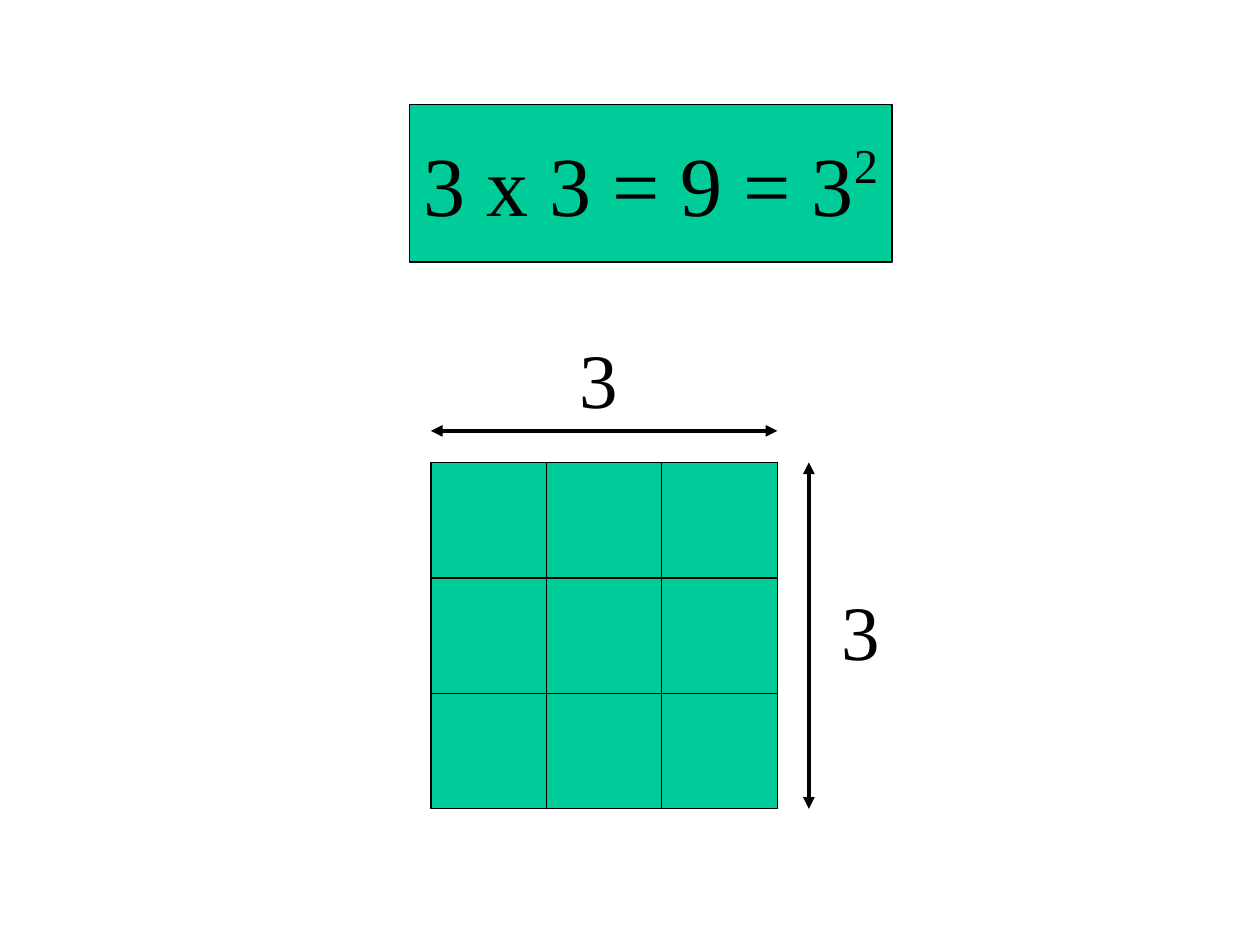
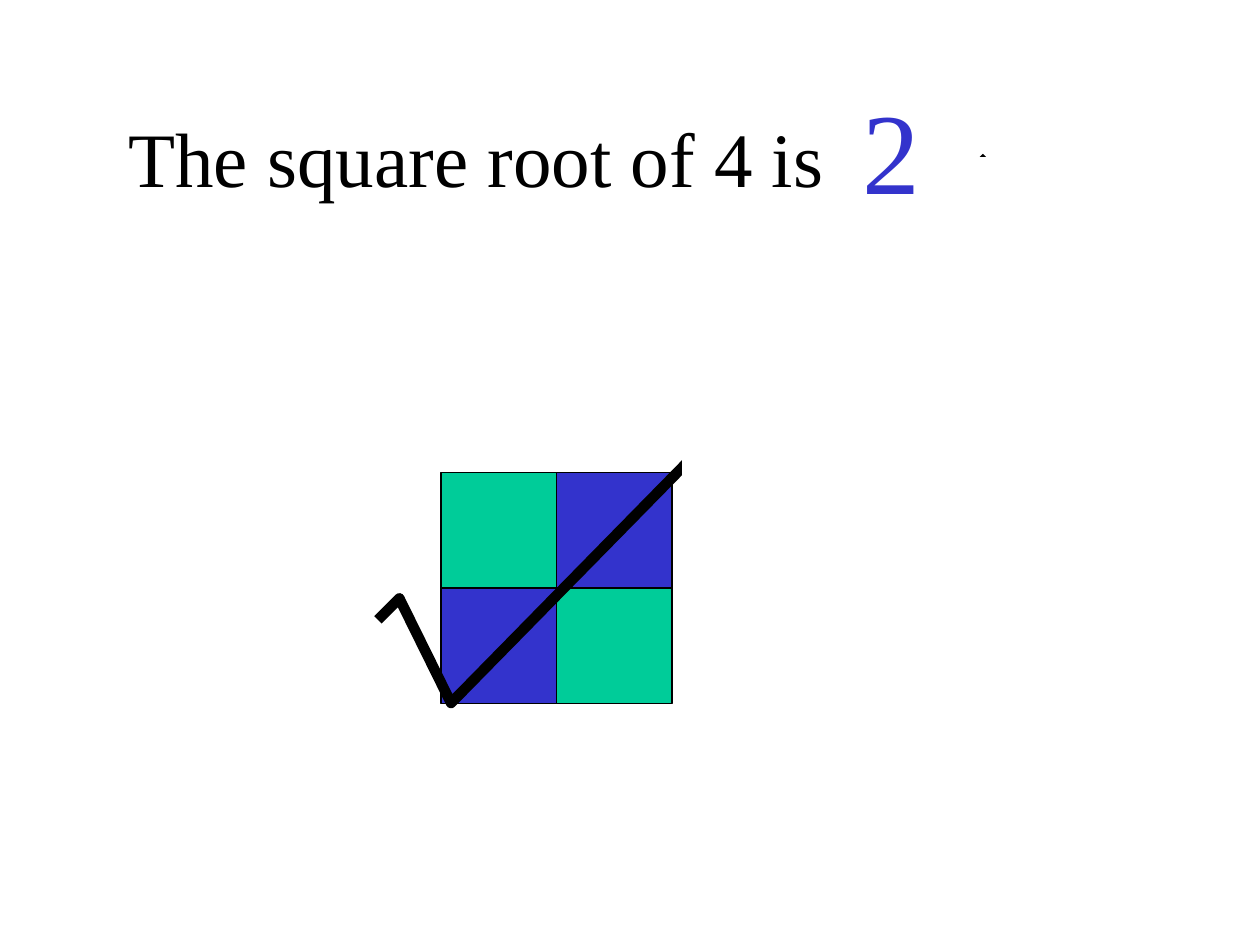
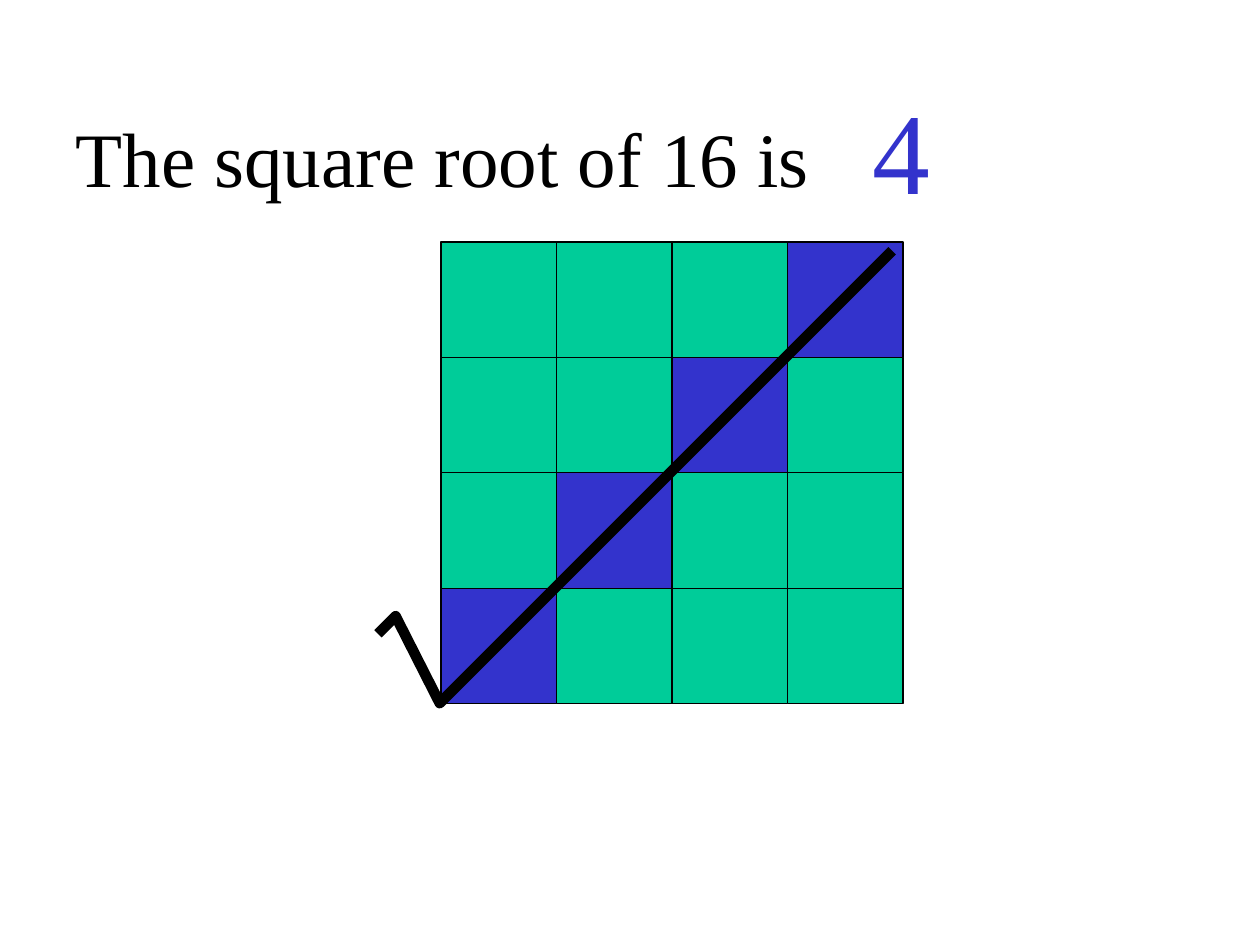
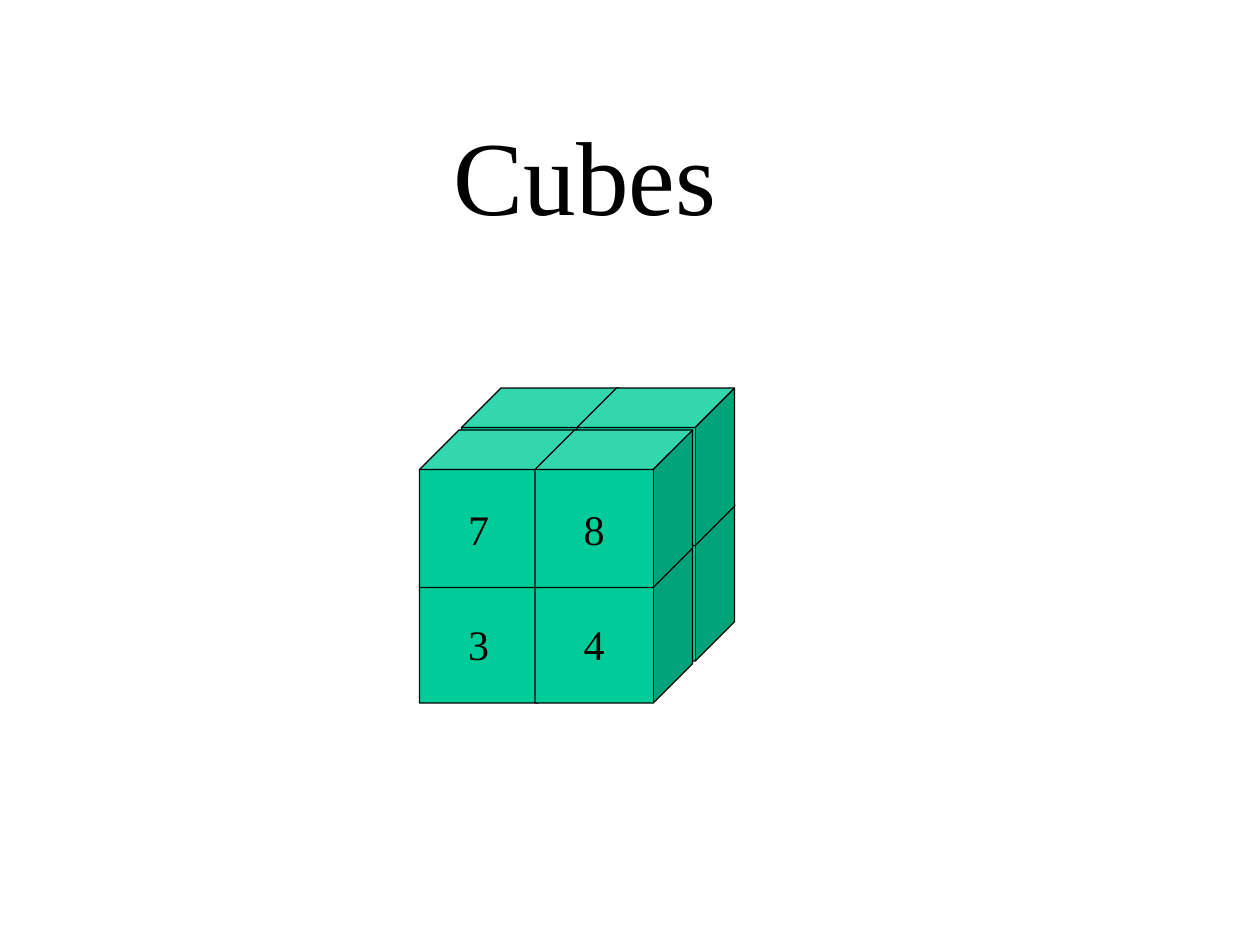
"""Build four slides on squares, square roots and cubes."""
from dataclasses import dataclass
from typing import Any, Optional

import pptx
import pptx.dml.color
import pptx.enum.shapes
import pptx.enum.text
import pptx.oxml.ns
import pptx.oxml.xmlchemy
import pptx.util

Inches = pptx.util.Inches
RGBColor = pptx.dml.color.RGBColor
SHAPE = pptx.enum.shapes.MSO_SHAPE
ALIGN = pptx.enum.text.PP_ALIGN
ANCHOR = pptx.enum.text.MSO_ANCHOR
qn = pptx.oxml.ns.qn
OxmlElement = pptx.oxml.xmlchemy.OxmlElement

GREEN = RGBColor(0x00, 0xCC, 0x99)
BLUE = RGBColor(0x33, 0x33, 0xCC)
BLACK = RGBColor(0x00, 0x00, 0x00)
WHITE = RGBColor(0xFF, 0xFF, 0xFF)
FONT = "Times New Roman"
CELL = 11 / 12
CUBE = 1.25
CUBE_SHIFT = 1 / 3
TITLE_LAYOUT, BLANK_LAYOUT = 5, 6


@dataclass(frozen=True)
class Box:
    left: float
    top: float
    width: float
    height: float

    def lengths(self) -> tuple:
        return tuple(Inches(v) for v in (self.left, self.top, self.width, self.height))


@dataclass(frozen=True)
class Label:
    text: str
    box: Box
    size: float
    color: RGBColor = BLACK


@dataclass(frozen=True)
class Grid:
    left: float
    top: float
    count: int
    diagonal: RGBColor = GREEN


@dataclass(frozen=True)
class RootSlide:
    title: Label
    answer: Label
    grid: Grid
    grouped: bool
    root_sign: tuple
    mask: Optional[Box] = None


DIMENSIONS = (((3.42, 3.42), (6.17, 3.42)), ((6.42, 6.42), (6.42, 3.67)))
SIDE_LABELS = (
    Label("3", Box(4.5, 2.58, 0.83, 0.83), 44),
    Label("3", Box(6.58, 4.58, 0.83, 0.83), 44),
)
ROOT_SLIDES = (
    RootSlide(
        Label("The square root of 4 is", Box(0.92, 0.83, 5.92, 0.83), 44),
        Label("2", Box(6.75, 0.58, 1.58, 1.2), 66, BLUE),
        Grid(3.5, 3.75, 2, BLUE),
        True,
        ((3, 4.92), (3.17, 4.75), (3.58, 5.58), (7.83, 1.25)),
        Box(5.42, 1.25, 2.75, 2.58),
    ),
    RootSlide(
        Label("The square root of 16 is", Box(0.5, 0.83, 6.33, 0.83), 44),
        Label("4", Box(6.83, 0.58, 1.58, 1.2), 66, BLUE),
        Grid(3.5, 1.92, 4, BLUE),
        False,
        ((3, 5.03), (3.14, 4.89), (3.49, 5.58), (7.08, 1.99)),
    ),
)


def format_runs(tf: Any, size: float, color: RGBColor = BLACK) -> None:
    for p in tf.paragraphs:
        for r in p.runs:
            r.font.name = FONT
            r.font.size = pptx.util.Pt(size)
            r.font.color.rgb = color


def add_label(slide: Any, label: Label) -> None:
    sp = slide.shapes.add_textbox(*label.box.lengths())
    sp.text_frame.word_wrap = True
    sp.text_frame.text = label.text
    format_runs(sp.text_frame, label.size, label.color)


def set_title(slide: Any, label: Label) -> None:
    sp = slide.shapes.title
    sp.left, sp.top, sp.width, sp.height = label.box.lengths()
    tf = sp.text_frame
    tf.text = label.text
    tf.auto_size = pptx.enum.text.MSO_AUTO_SIZE.NONE
    tf.vertical_anchor = ANCHOR.TOP
    tf.paragraphs[0].alignment = ALIGN.LEFT
    format_runs(tf, label.size, label.color)
    sp.element.getparent().append(sp.element)


def set_line(sp: Any, width: float, color: RGBColor = BLACK) -> None:
    sp.line.color.rgb = color
    sp.line.width = pptx.util.Pt(width)


def extend_line(sp: Any, tag: str, **attributes: str) -> None:
    ln = sp.element.spPr.find(qn("a:ln"))
    child = OxmlElement(tag)
    for name, value in attributes.items():
        child.set(name, value)
    ln.append(child)


def add_solid(
    shapes: Any, kind: Any, box: Box, fill: RGBColor = GREEN, line: RGBColor = BLACK
) -> Any:
    sp = shapes.add_shape(kind, *box.lengths())
    sp.shadow.inherit = False
    sp.fill.solid()
    sp.fill.fore_color.rgb = fill
    set_line(sp, 0.75, line)
    return sp


def center_text(sp: Any, text: str, size: float) -> None:
    tf = sp.text_frame
    tf.word_wrap = False
    tf.vertical_anchor = ANCHOR.MIDDLE
    tf.text = text
    tf.paragraphs[0].alignment = ALIGN.CENTER
    format_runs(tf, size)


def draw_grid(shapes: Any, grid: Grid) -> None:
    for row in range(grid.count):
        for col in range(grid.count):
            box = Box(grid.left + col * CELL, grid.top + row * CELL, CELL, CELL)
            on_diagonal = row + col == grid.count - 1
            add_solid(shapes, SHAPE.RECTANGLE, box, grid.diagonal if on_diagonal else GREEN)


def draw_dimension(slide: Any, start: tuple, end: tuple) -> None:
    points = [Inches(v) for v in start + end]
    line = slide.shapes.add_connector(pptx.enum.shapes.MSO_CONNECTOR.STRAIGHT, *points)
    set_line(line, 2.25)
    extend_line(line, "a:headEnd", type="triangle")
    extend_line(line, "a:tailEnd", type="triangle")
    line.element.spPr.append(OxmlElement("a:effectLst"))


def draw_root_sign(slide: Any, points: tuple) -> None:
    start, *rest = [(Inches(x), Inches(y)) for x, y in points]
    builder = slide.shapes.build_freeform(*start)
    builder.add_line_segments(rest, close=False)
    sp = builder.convert_to_shape()
    sp.shadow.inherit = False
    sp.fill.background()
    set_line(sp, 6)
    extend_line(sp, "a:round")


def add_slide(prs: Any, layout: int) -> Any:
    return prs.slides.add_slide(prs.slide_layouts[layout])


def build_square(prs: Any) -> None:
    slide = add_slide(prs, BLANK_LAYOUT)
    draw_grid(slide.shapes.add_group_shape().shapes, Grid(3.42, 3.67, 3))
    formula = add_solid(slide.shapes, SHAPE.RECTANGLE, Box(3.25, 0.83, 3.83, 1.25))
    center_text(formula, "3 x 3 = 9 = 3", 48)
    formula.text_frame.paragraphs[0].add_run().text = "2"
    format_runs(formula.text_frame, 48)
    exponent = list(formula.element.iter(qn("a:rPr")))[-1]
    exponent.set("baseline", "40000")
    for start, end in DIMENSIONS:
        draw_dimension(slide, start, end)
    for label in SIDE_LABELS:
        add_label(slide, label)


def build_root(prs: Any, root: RootSlide) -> None:
    slide = add_slide(prs, TITLE_LAYOUT)
    shapes = slide.shapes.add_group_shape().shapes if root.grouped else slide.shapes
    draw_grid(shapes, root.grid)
    draw_root_sign(slide, root.root_sign)
    if root.mask:
        add_solid(slide.shapes, SHAPE.RECTANGLE, root.mask, WHITE, WHITE)
    set_title(slide, root.title)
    add_label(slide, root.answer)


def build_cubes(prs: Any) -> None:
    slide = add_slide(prs, TITLE_LAYOUT)
    for i in range(8):
        layer, depth, col = i // 4, 1 - i // 2 % 2, i % 2
        left = 3.33 + col * CELL + depth * CUBE_SHIFT
        top = 4.33 - layer * CELL - depth * CUBE_SHIFT
        cube = add_solid(slide.shapes, SHAPE.CUBE, Box(left, top, CUBE, CUBE))
        cube.adjustments[0] = 0.25
        center_text(cube, str(i + 1), 24)
    set_title(slide, Label("Cubes", Box(3.5, 0.83, 3.42, 1.1), 60))


def main() -> None:
    prs = pptx.Presentation()
    prs.slide_width, prs.slide_height = Inches(10), Inches(7.5)
    build_square(prs)
    for root in ROOT_SLIDES:
        build_root(prs, root)
    build_cubes(prs)
    prs.save("out.pptx")


if __name__ == "__main__":
    main()
